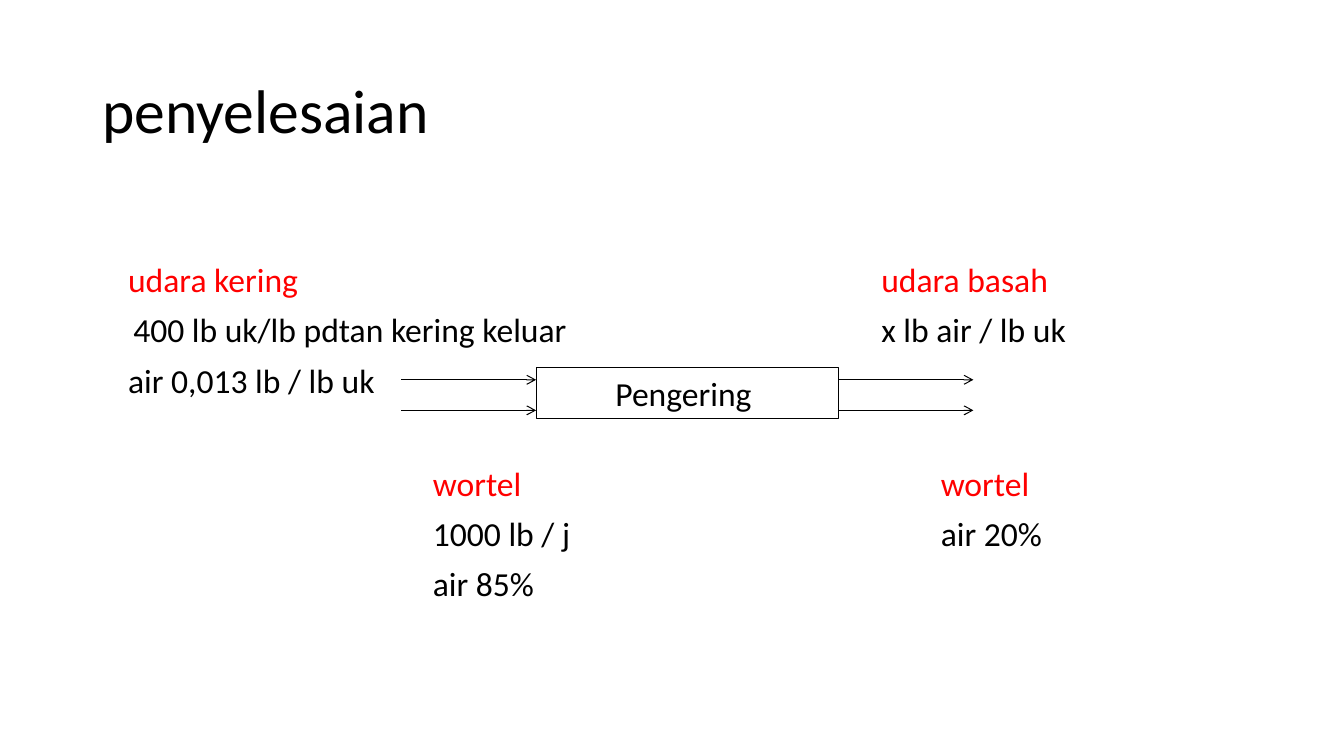
from dataclasses import dataclass

from lxml.etree import SubElement
from pptx import Presentation
from pptx.dml.color import RGBColor
from pptx.enum.shapes import MSO_CONNECTOR, MSO_SHAPE
from pptx.enum.text import MSO_ANCHOR, PP_ALIGN
from pptx.oxml.ns import qn
from pptx.util import Cm, Pt


@dataclass(frozen=True)
class Theme:
    """Colours, font and sizes of the slide."""
    font: str = "Calibri"
    ink: RGBColor = RGBColor(0x00, 0x00, 0x00)
    stream: RGBColor = RGBColor(0xFF, 0x00, 0x00)
    title: Pt = Pt(44)
    body: Pt = Pt(24)
    line: Pt = Pt(0.75)
    gap: Pt = Pt(10)
    leading: float = 0.9


THEME = Theme()


def style(paragraph, size, color):
    """Format every run of a paragraph."""
    for run in paragraph.runs:
        run.font.name = THEME.font
        run.font.size = size
        run.font.color.rgb = color


def add_title(slide, left, top, width, height, wording):
    """Place the slide title, centred vertically in its box."""
    frame = slide.shapes.add_textbox(Cm(left), Cm(top), Cm(width), Cm(height)).text_frame
    frame.word_wrap = True
    frame.vertical_anchor = MSO_ANCHOR.MIDDLE
    frame.text = wording
    frame.paragraphs[0].line_spacing = THEME.leading
    style(frame.paragraphs[0], THEME.title, THEME.ink)


def add_stream(slide, left, top, width, height, name, details, first_indent=0):
    """Place a stream's red name with its details below."""
    frame = slide.shapes.add_textbox(Cm(left), Cm(top), Cm(width), Cm(height)).text_frame
    frame.word_wrap = True
    frame.margin_left = frame.margin_right = frame.margin_top = frame.margin_bottom = 0
    frame.text = "\n".join([name, *details])
    for row, paragraph in enumerate(frame.paragraphs):
        paragraph.line_spacing = THEME.leading
        if row:
            paragraph.space_before = THEME.gap
        style(paragraph, THEME.body, THEME.ink if row else THEME.stream)
    if first_indent:
        frame.paragraphs[1]._p.get_or_add_pPr().set("marL", str(Cm(first_indent)))


def add_arrow(slide, left, y, length):
    """Draw a flow arrow pointing right."""
    arrow = slide.shapes.add_connector(
        MSO_CONNECTOR.STRAIGHT, Cm(left), Cm(y), Cm(left + length), Cm(y))
    arrow.line.color.rgb = THEME.ink
    arrow.line.width = THEME.line
    SubElement(arrow.line._get_or_add_ln(), qn("a:tailEnd"), type="arrow")
    SubElement(arrow._element.spPr, qn("a:effectLst"))


def add_dryer(slide, left, top, width, height):
    """Draw the dryer with two streams entering and two leaving."""
    dryer = slide.shapes.add_shape(
        MSO_SHAPE.RECTANGLE, Cm(left), Cm(top), Cm(width), Cm(height))
    dryer.shadow.inherit = False
    dryer.fill.background()
    dryer.line.color.rgb = THEME.ink
    dryer.line.width = THEME.line
    frame = dryer.text_frame
    frame.vertical_anchor = MSO_ANCHOR.MIDDLE
    frame.text = "Pengering "
    frame.paragraphs[0].alignment = PP_ALIGN.CENTER
    style(frame.paragraphs[0], THEME.body, THEME.ink)
    reach = 3.4
    for drop in (0.32, 1.09):
        for start in (left - reach, left + width):
            add_arrow(slide, start, top + drop, reach)


def add_drying_diagram(slide, left, top, width, height):
    """Place the four streams around the dryer."""
    carrot_top = top + 5.13
    add_stream(slide, left, top, 11.8, 3.5, "udara kering",
               ["400 lb uk/lb pdtan kering keluar", "air 0,013 lb / lb uk"], 0.13)
    add_stream(slide, left + 18.98, top, width - 18.98, 2.3,
               "udara basah", ["x lb air / lb uk"])
    add_stream(slide, left + 7.68, carrot_top, 6, height - 5.13,
               "wortel", ["1000 lb / j", "air 85%"])
    add_stream(slide, left + 20.48, carrot_top, width - 20.48, 2.3,
               "wortel", ["air 20%"])
    add_dryer(slide, left + 10.28, top + 2.61, 7.62, 1.3)


def main():
    """Build the slide and save it."""
    deck = Presentation()
    deck.slide_width, deck.slide_height = Cm(33.87), Cm(19.05)
    slide = deck.slides.add_slide(deck.slide_layouts[6])
    add_title(slide, 2.33, 1.01, 29.21, 3.68, "penyelesaian")
    add_drying_diagram(slide, 3.23, 6.64, 28.06, 8.63)
    deck.save("out.pptx")


if __name__ == "__main__":
    main()
